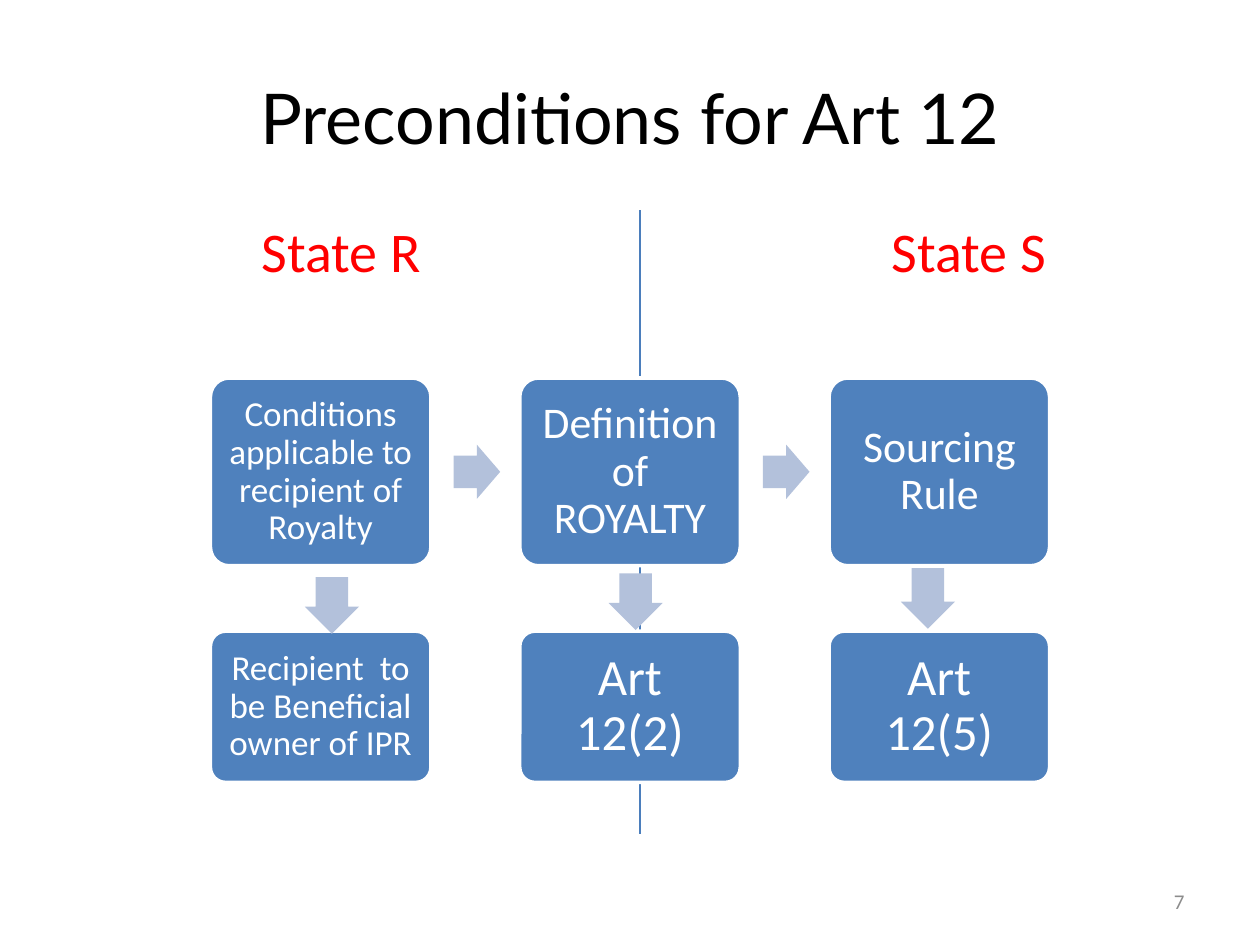
from dataclasses import dataclass

from lxml.etree import SubElement
from pptx import Presentation
from pptx.dml.color import RGBColor
from pptx.enum.shapes import MSO_CONNECTOR, MSO_SHAPE
from pptx.enum.text import MSO_ANCHOR, PP_ALIGN
from pptx.oxml.ns import qn
from pptx.util import Inches, Pt


@dataclass(frozen=True)
class Theme:
    """Colours, fonts and type sizes of the slide."""
    black: RGBColor = RGBColor(0, 0, 0)
    white: RGBColor = RGBColor(255, 255, 255)
    red: RGBColor = RGBColor(255, 0, 0)
    grey: RGBColor = RGBColor(0x8C, 0x8C, 0x8C)
    box: RGBColor = RGBColor(0x4F, 0x81, 0xBD)
    arrow: RGBColor = RGBColor(0xB3, 0xC1, 0xDB)
    divider: RGBColor = RGBColor(0x4B, 0x7E, 0xBC)
    title_font: str = "Lato"
    body_font: str = "Calibri"
    title_size: int = 40
    state_size: int = 32
    article_size: int = 29
    step_size: int = 25
    detail_size: int = 20
    number_size: int = 12


THEME = Theme()
GRID_LEFT, COLUMN_PITCH, BOX_WIDTH = 1.67, 2.455, 1.75
ROWS = ((3, 1.49), (5.01, 1.2))
ARROW_ACROSS = 0.43
STEPS = (
    (("Conditions applicable to recipient of Royalty", THEME.detail_size, 0.08),
     ("Definition of ROYALTY", THEME.step_size, 0.1),
     ("Sourcing Rule", THEME.step_size, 0.1)),
    (("Recipient  to be Beneficial owner of IPR", THEME.detail_size, 0.08),
     ("Art 12(2)", THEME.article_size, 0.12),
     ("Art 12(5)", THEME.article_size, 0.12)),
)
DOWN_ARROWS = ((2.42, 4.58, 0.45), (4.83, 4.55, 0.45), (7.15, 4.51, 0.48))


def place(shape, left, top, width, height):
    """Move and size a shape in inches."""
    shape.left, shape.top = Inches(left), Inches(top)
    shape.width, shape.height = Inches(width), Inches(height)


def write(shape, text, size, color, align=PP_ALIGN.CENTER,
          anchor=MSO_ANCHOR.MIDDLE, font=THEME.body_font):
    """Write one formatted paragraph and return it."""
    frame = shape.text_frame
    frame.word_wrap = True
    frame.vertical_anchor = anchor
    frame.text = text
    paragraph = frame.paragraphs[0]
    paragraph.alignment = align
    paragraph.font.name = font
    paragraph.font.size = Pt(size)
    paragraph.font.color.rgb = color
    return paragraph


def add_state(placeholder, text, center):
    """Turn a body placeholder into an unbulleted heading."""
    width = 2.5
    place(placeholder, center - width / 2, 1.67, width, 0.75)
    paragraph = write(placeholder, text, THEME.state_size, THEME.red, anchor=MSO_ANCHOR.TOP)
    properties = paragraph._p.get_or_add_pPr()
    properties.set("marL", "0")
    properties.set("indent", "0")
    properties.insert_element_before(
        SubElement(properties, qn("a:buNone")), "a:tabLst", "a:defRPr", "a:extLst")


def add_divider(slide):
    """Draw the border between the two states."""
    x = Inches(5.08)
    line = slide.shapes.add_connector(MSO_CONNECTOR.STRAIGHT, x, Inches(1.67), x, Inches(6.62))
    line.line.color.rgb = THEME.divider
    line.line.width = Pt(0.75)
    SubElement(line._element.spPr, qn("a:effectLst"))


def add_filled(slide, kind, bounds, color, adjustments):
    """Add a flat preset shape without an outline."""
    shape = slide.shapes.add_shape(kind, *map(Inches, bounds))
    shape.shadow.inherit = False
    shape.fill.solid()
    shape.fill.fore_color.rgb = color
    shape.line.fill.background()
    for index, value in enumerate(adjustments):
        shape.adjustments[index] = value
    return shape


def add_box(slide, column, row, text, size, inset):
    """Add a captioned box in a cell of the grid."""
    top, height = ROWS[row]
    bounds = (GRID_LEFT + column * COLUMN_PITCH, top, BOX_WIDTH, height)
    box = add_filled(slide, MSO_SHAPE.ROUNDED_RECTANGLE, bounds, THEME.box, (0.1,))
    box.line.color.rgb = THEME.white
    box.line.width = Pt(2)
    frame = box.text_frame
    frame.margin_left = frame.margin_right = Inches(inset)
    frame.margin_top = frame.margin_bottom = Inches(inset)
    write(box, text, size, THEME.white).line_spacing = 0.9


def add_arrow(slide, kind, *bounds):
    """Add a block arrow."""
    add_filled(slide, kind, bounds, THEME.arrow, (0.6, 0.5))


def main():
    """Build and save the slide."""
    presentation = Presentation()
    presentation.slide_width, presentation.slide_height = Inches(10), Inches(7.5)
    slide = presentation.slides.add_slide(presentation.slide_layouts[3])
    title, state_r, state_s = slide.placeholders
    place(title, 0.5, 0.3, 9, 1.25)
    write(title, "Preconditions for Art 12", THEME.title_size, THEME.black,
          font=THEME.title_font)
    add_state(state_r, "State R", 2.71)
    add_state(state_s, "State S", 7.69)

    number = slide.shapes.add_textbox(0, 0, 0, 0)
    place(number, 7.17, 6.95, 2.33, 0.4)
    write(number, "7", THEME.number_size, THEME.grey, PP_ALIGN.RIGHT)

    add_divider(slide)
    for row, steps in enumerate(STEPS):
        for column, step in enumerate(steps):
            add_box(slide, column, row, *step)
    for column in range(2):
        add_arrow(slide, MSO_SHAPE.RIGHT_ARROW,
                  GRID_LEFT + BOX_WIDTH + 0.18 + column * COLUMN_PITCH, 3.53, 0.37, ARROW_ACROSS)
    for left, top, length in DOWN_ARROWS:
        add_arrow(slide, MSO_SHAPE.DOWN_ARROW, left, top, ARROW_ACROSS, length)
    presentation.save("out.pptx")


if __name__ == "__main__":
    main()
